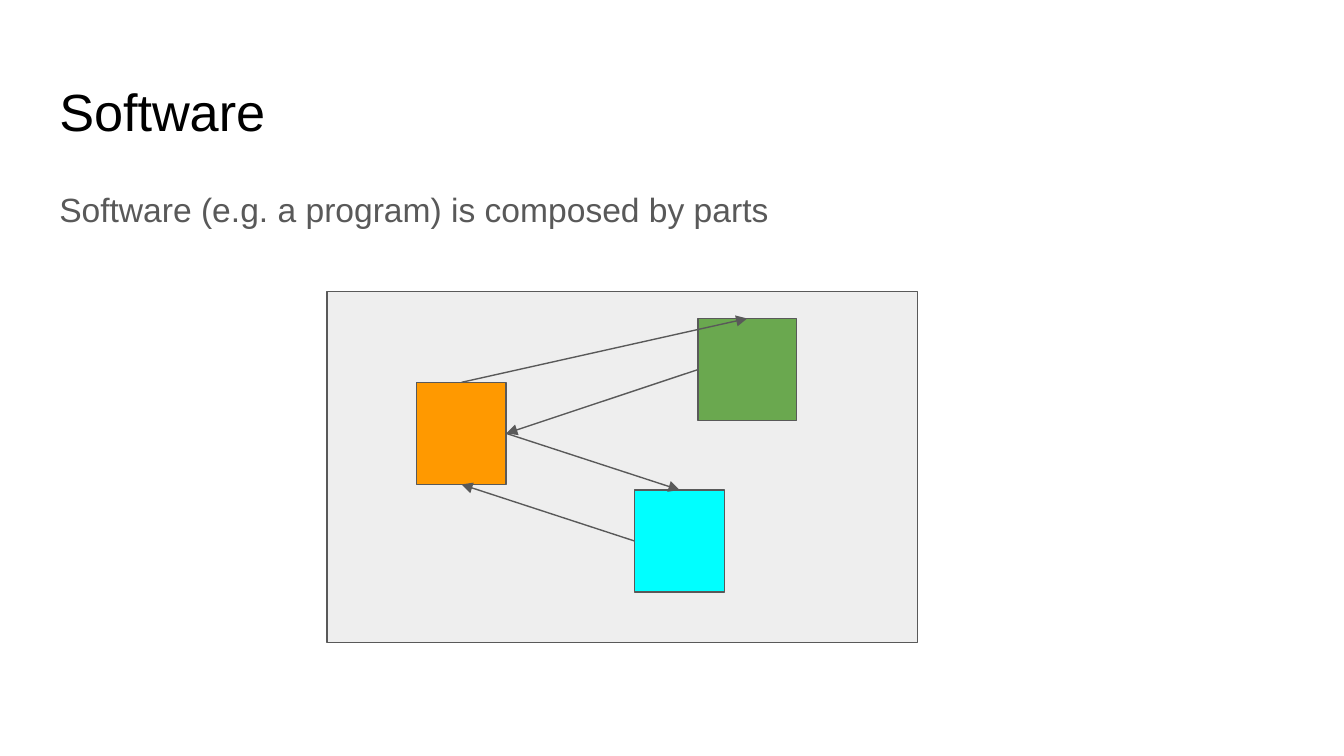
from pptx import Presentation
from pptx import util as u
from pptx.dml.color import RGBColor
from pptx.enum import shapes, text
from pptx.oxml.ns import qn
from lxml import etree

BLACK = RGBColor(0x00, 0x00, 0x00)
GRAY = RGBColor(0x59, 0x59, 0x59)
PALE = RGBColor(0xEE, 0xEE, 0xEE)
ORANGE = RGBColor(0xFF, 0x99, 0x00)
CYAN = RGBColor(0x00, 0xFF, 0xFF)
GREEN = RGBColor(0x6A, 0xA8, 0x4F)

WIDTH = u.Inches(10)
HEIGHT = WIDTH * 9 // 16
CELL = WIDTH // 100  # side of a grid cell: a hundred columns across
TOP, LEFT, BOTTOM, RIGHT = range(4)  # connection sites of a rectangle


def grid(*cells):
    return [u.Emu(round(cell * CELL)) for cell in cells]


def fill_placeholder(box, area, words, size, color):
    box.left, box.top, box.width, box.height = grid(*area)
    frame = box.text_frame
    frame.word_wrap = True
    frame.auto_size = text.MSO_AUTO_SIZE.NONE
    frame.vertical_anchor = text.MSO_ANCHOR.TOP
    frame.margin_left, frame.margin_top, frame.margin_right, frame.margin_bottom = grid(1, 1, 1, 1)
    frame.text = words
    para = frame.paragraphs[0]
    properties = para._p.get_or_add_pPr()
    properties.set("marL", "0")
    properties.set("indent", "0")
    etree.SubElement(properties, qn("a:buNone"))
    para.alignment = text.PP_ALIGN.LEFT
    para.space_before = u.Pt(0)
    para.font.name = "Arial"
    para.font.size = u.Pt(size)
    para.font.color.rgb = color
    return para


def outline(line):
    line.color.rgb = GRAY
    line.width = u.Pt(0.75)


def add_part(page, area, color):
    part = page.shapes.add_shape(shapes.MSO_SHAPE.RECTANGLE, *grid(*area))
    part.shadow.inherit = False
    part.fill.solid()
    part.fill.fore_color.rgb = color
    outline(part.line)
    return part


def add_arrow(page, source, source_site, target, target_site):
    arrow = page.shapes.add_connector(shapes.MSO_CONNECTOR.STRAIGHT, 0, 0, 0, 0)
    arrow.begin_connect(source, source_site)
    arrow.end_connect(target, target_site)
    outline(arrow.line)
    etree.SubElement(arrow.line._get_or_add_ln(), qn("a:tailEnd"), type="triangle")
    etree.SubElement(arrow._element.spPr, qn("a:effectLst"))


def main():
    deck = Presentation()
    deck.slide_width, deck.slide_height = WIDTH, HEIGHT
    page = deck.slides.add_slide(deck.slide_layouts[1])

    # Title and body
    title, body = page.placeholders
    fill_placeholder(title, (3.41, 4.87, 93.18, 6.26), "Software", 28, BLACK)
    para = fill_placeholder(body, (3.41, 12.6, 93.18, 37.36),
                            "Software (e.g. a program) is composed by parts", 18, GRAY)
    para.line_spacing = 1.15
    para.space_after = u.Pt(16)

    # The program and its parts
    add_part(page, (24.33, 21.7, 43.95, 26.1), PALE)
    orange = add_part(page, (31, 28.45, 6.67, 7.6), ORANGE)
    cyan = add_part(page, (47.23, 36.46, 6.67, 7.6), CYAN)
    green = add_part(page, (51.93, 23.7, 7.33, 7.6), GREEN)

    # Links between the parts
    for link in (
        (orange, RIGHT, cyan, TOP),
        (cyan, LEFT, orange, BOTTOM),
        (orange, TOP, green, TOP),
        (green, LEFT, orange, RIGHT),
    ):
        add_arrow(page, *link)

    deck.save("out.pptx")


if __name__ == "__main__":
    main()
